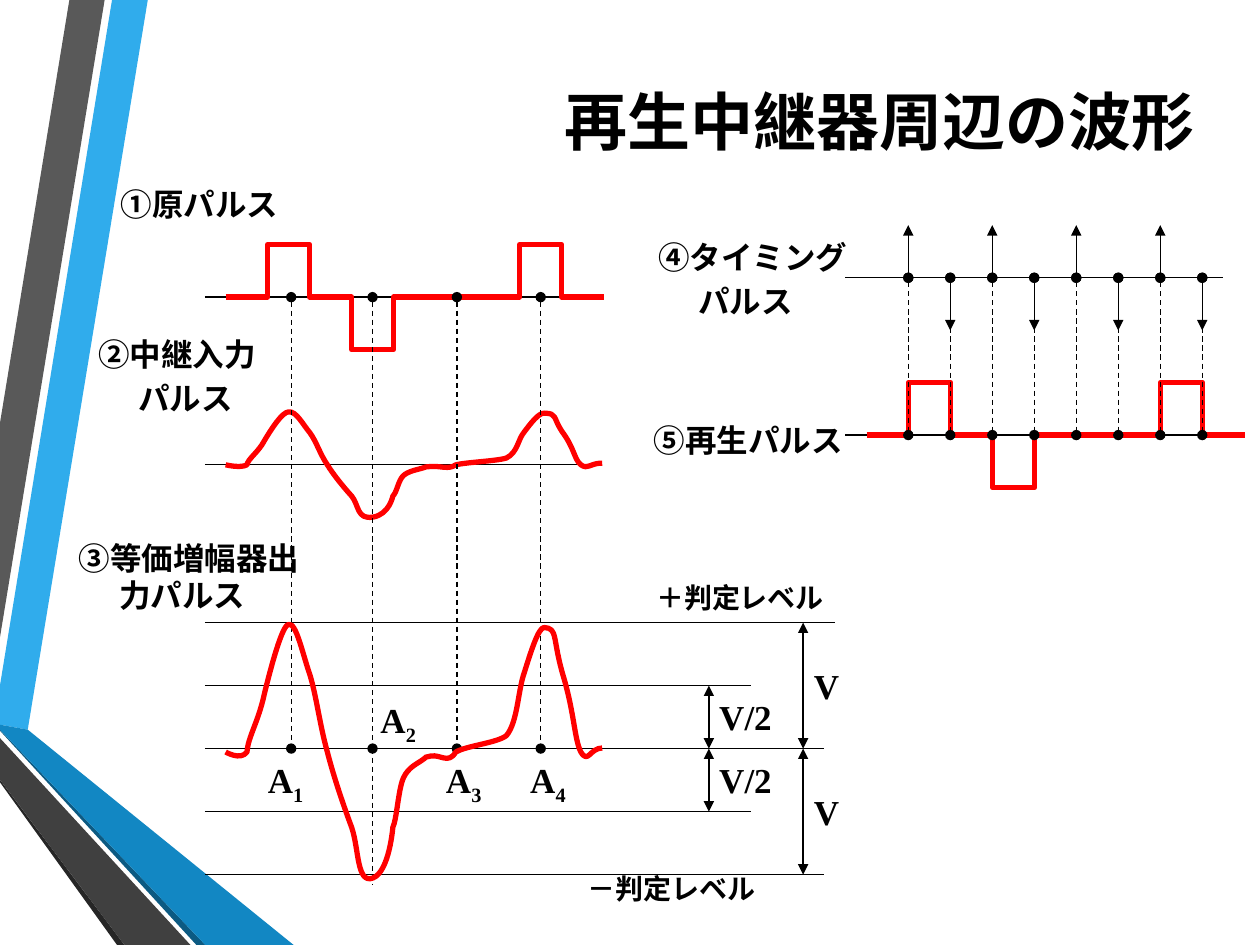
from dataclasses import dataclass

from lxml.etree import SubElement
from pptx import Presentation
from pptx.dml.color import RGBColor
from pptx.enum.dml import MSO_LINE
from pptx.enum.shapes import MSO_CONNECTOR
from pptx.enum.text import MSO_ANCHOR, PP_ALIGN
from pptx.oxml.ns import qn
from pptx.util import Cm, Pt


@dataclass(frozen=True)
class Theme:
    ink: str = "000000"
    signal: str = "FF0000"
    latin: str = "Times New Roman"
    title_font: str = "Calibri"
    title: int = 36
    symbol: int = 20
    label: int = 18
    level: int = 16
    thin: float = 0.75
    thick: float = 3


THEME = Theme()
SLOT = 7.62 / 9
PULSE_HEIGHT = 1.06
HANG = 0.81
PULSES = (0, 1, 0, -1, 0, 0, 0, 1, 0)
SAMPLES = (5.87, 7.51, 9.21, 10.9)
LEVEL_AXIS, LEVEL_STEP = 15.09, 1.27

RIBBONS = (
    ("30ACEC", ((0, 13.82), (0, 14.61), (0.56, 14.71), (2.98, 0), (2.26, 0))),
    ("595959", ((2.11, 0), (1.4, 0), (0, 8.53), (0, 12.85))),
    ("262626", ((0, 15.72), (0, 15.77), (2.36, 19.05), (2.51, 19.05))),
    ("0C5A82", ((0, 14.71), (0, 14.73), (3.96, 19.05), (4.14, 19.05))),
    ("1287C3", ((0, 14.71), (4.14, 19.05), (5.92, 19.05), (0.56, 14.71), (0, 14.61))),
    ("404040", ((0, 15.72), (2.51, 19.05), (3.84, 19.05), (0, 14.88))),
)

WAVE = (
    (4.55, 0),
    (4.55, 0), (4.85, 0.18), (4.98, 0),
    (5, -0.3), (5.21, -0.61), (5.33, -1.17),
    (5.46, -1.7), (5.69, -2.57), (5.82, -2.57),
    (5.97, -2.62), (6.1, -1.98), (6.25, -1.55),
    (6.38, -1.12), (6.45, -0.53), (6.6, 0),
    (6.73, 0.51), (6.93, 1.09), (7.09, 1.52),
    (7.24, 1.96), (7.19, 2.67), (7.52, 2.54),
    (7.85, 2.41), (7.92, 1.52), (7.92, 1.52),
    (8, 1.35), (8.03, 0.76), (8.13, 0.53),
    (8.23, 0.3), (8.43, 0.23), (8.53, 0.15),
    (8.64, 0.08), (8.48, 0.13), (8.69, 0.08),
    (8.89, 0.05), (9.04, 0.25), (9.19, 0),
    (9.42, -0.13), (10.01, -0.18), (10.21, -0.33),
    (10.44, -0.61), (10.44, -1.24), (10.57, -1.6),
    (10.69, -1.98), (10.85, -2.51), (10.97, -2.51),
    (11.25, -2.49), (11.13, -2.31), (11.35, -1.55),
    (11.58, -0.79), (11.58, -0.25), (11.71, 0),
    (11.86, 0.25), (11.89, -0.08), (12.14, -0.08),
)

LABELS = (
    (2.44, 3.74, THEME.label, ("①原パルス",)),
    (1.98, 6.76, THEME.label, ("②中継入力", "\tパルス")),
    (1.59, 10.86, THEME.label, ("③等価増幅器出力パルス",)),
    (13.27, 4.8, THEME.label, ("④タイミング", "\tパルス")),
    (13.18, 8.48, THEME.label, ("⑤再生パルス",)),
    (13.23, 11.71, THEME.level, ("＋判定レベル",)),
    (11.85, 17.57, THEME.level, ("－判定レベル",)),
    (14.5, 14.03, THEME.symbol, ("V/2",)),
    (14.5, 15.3, THEME.symbol, ("V/2",)),
    (16.41, 13.39, THEME.symbol, ("V",)),
    (16.41, 15.93, THEME.symbol, ("V",)),
)
LABEL_SIZES = {THEME.label: (4.45, 0.84), THEME.level: (3.61, 0.84), THEME.symbol: (1.47, 1.07)}
SAMPLE_LABELS = ((5.4, 15.3), (7.67, 14.08), (8.99, 15.3), (10.69, 15.3))


def add_outline(s, points, fill=None):
    (x, y), *rest = [(Cm(px), Cm(py)) for px, py in points]
    builder = s.shapes.build_freeform(x, y, scale=1.0)
    builder.add_line_segments(rest, close=fill is not None)
    sp = builder.convert_to_shape()
    sp.shadow.inherit = False
    if fill:
        sp.fill.solid()
        sp.fill.fore_color.rgb = RGBColor.from_string(fill)
        sp.line.fill.background()
    else:
        sp.fill.background()
        sp.line.color.rgb = RGBColor.from_string(THEME.signal)
        sp.line.width = Pt(THEME.thick)
    return sp


def add_line(s, x1, y1, x2, y2, head=None, tail=None, dashed=False):
    sp = s.shapes.add_connector(MSO_CONNECTOR.STRAIGHT, Cm(x1), Cm(y1), Cm(x2), Cm(y2))
    sp.line.color.rgb = RGBColor.from_string(THEME.ink)
    sp.line.width = Pt(THEME.thin)
    if dashed:
        sp.line.dash_style = MSO_LINE.DASH
    for tag, kind in (("a:headEnd", head), ("a:tailEnd", tail)):
        if kind:
            SubElement(sp.line._get_or_add_ln(), qn(tag), type=kind)
    SubElement(sp._element.spPr, qn("a:effectLst"))


def style_font(font, name, size):
    font.name, font.size, font.bold = name, Pt(size), True
    font.color.rgb = RGBColor.from_string(THEME.ink)


def add_label(s, x, y, size, lines, subscript=None):
    width, height = LABEL_SIZES[size]
    tf = s.shapes.add_textbox(Cm(x), Cm(y), Cm(width), Cm(height)).text_frame
    tf.word_wrap = True
    tf.margin_left = tf.margin_right = tf.margin_top = tf.margin_bottom = 0
    for i, line in enumerate(lines):
        p = tf.add_paragraph() if i else tf.paragraphs[0]
        p.space_before = Pt(size * 0.2)
        pPr = p._p.get_or_add_pPr()
        pPr.set("marL", str(Cm(HANG)))
        pPr.set("indent", str(-Cm(HANG)))
        style_font(p.font, THEME.latin, size)
        p.add_run().text = line
    if subscript:
        r = p.add_run()
        r.text = subscript
        r._r.get_or_add_rPr().set("baseline", "-25000")


def add_title(s, text):
    tf = s.shapes.add_textbox(Cm(10.89), Cm(0.84), Cm(13.43), Cm(3.18)).text_frame
    tf.word_wrap = True
    tf.vertical_anchor = MSO_ANCHOR.MIDDLE
    p = tf.paragraphs[0]
    p.text = text
    p.alignment = PP_ALIGN.RIGHT
    style_font(p.font, THEME.title_font, THEME.title)


def add_pulses(s, left, axis):
    points = [(left, axis)]
    for i, (before, after) in enumerate(zip(PULSES, PULSES[1:]), 1):
        if before != after:
            points += [(left + i * SLOT, axis - level * PULSE_HEIGHT)
                       for level in (before, after)]
    add_outline(s, points + [(left + len(PULSES) * SLOT, axis)])


def add_wave(s, axis, gain):
    sp = add_outline(s, [(x, axis + gain * y) for x, y in WAVE])
    outline = next(sp._element.iter(qn("a:path")))
    segments = outline.findall(qn("a:lnTo"))
    for i in range(0, len(segments), 3):
        curve = SubElement(outline, qn("a:cubicBezTo"))
        for segment in segments[i:i + 3]:
            curve.append(segment[0])
            outline.remove(segment)


def add_received_side(s):
    top, left = 5.99, 4.13
    for y in (9.37, top):
        add_line(s, left, y, 11.75, y)
    add_pulses(s, 4.55, top)
    add_wave(s, 9.37, 0.415)
    for i, right in enumerate((16.83, 15.13, 16.61, 15.13, 16.61), -2):
        y = LEVEL_AXIS + i * LEVEL_STEP
        add_line(s, left, y, right, y)
    for x, span in ((14.29, LEVEL_STEP), (16.19, 2 * LEVEL_STEP)):
        for y in (LEVEL_AXIS - span, LEVEL_AXIS):
            add_line(s, x, y, x, y + span, "triangle", "triangle")
    for x in SAMPLES:
        add_line(s, x, top, x, LEVEL_AXIS, "oval", "oval", dashed=True)
    add_line(s, SAMPLES[1], LEVEL_AXIS, SAMPLES[1], 17.83, dashed=True)
    add_wave(s, 15.16, 1)


def add_timing_side(s):
    timing, output, left = 5.6, 8.77, 17.04
    for y in (timing, output):
        add_line(s, left, y, 24.66, y)
    add_pulses(s, 17.47, output)
    for i in range(8):
        x = 18.31 + i * SLOT
        tip = timing + (PULSE_HEIGHT if i % 2 else -PULSE_HEIGHT)
        add_line(s, x, timing, x, output, "oval", "oval", dashed=True)
        add_line(s, x, timing, x, tip, "oval", "triangle")


def main():
    prs = Presentation()
    prs.slide_width, prs.slide_height = Cm(25.4), Cm(19.05)
    s = prs.slides.add_slide(prs.slide_layouts[6])
    for color, points in RIBBONS:
        add_outline(s, points, color)
    add_title(s, "再生中継器周辺の波形")
    add_received_side(s)
    add_timing_side(s)
    for label in LABELS:
        add_label(s, *label)
    for i, (x, y) in enumerate(SAMPLE_LABELS, 1):
        add_label(s, x, y, THEME.symbol, ("A",), str(i))
    prs.save("out.pptx")


if __name__ == "__main__":
    main()
